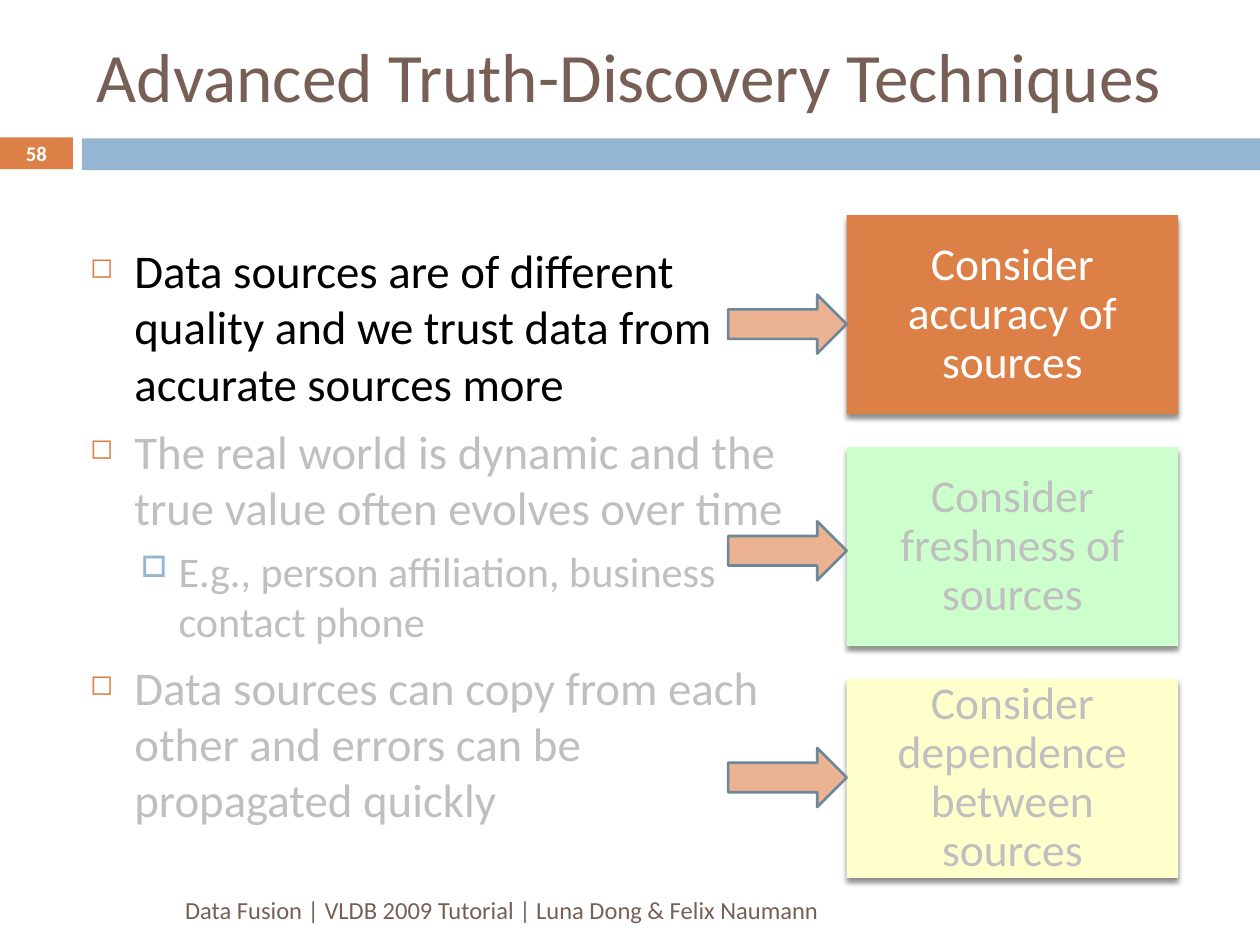
from lxml import etree
from pptx import Presentation
from pptx.dml.color import RGBColor
from pptx.enum.shapes import MSO_SHAPE
from pptx.enum.text import MSO_ANCHOR, PP_ALIGN
from pptx.oxml import parse_xml
from pptx.oxml.ns import qn
from pptx.util import Cm, Pt

RECTANGLE, ARROW = MSO_SHAPE.RECTANGLE, MSO_SHAPE.RIGHT_ARROW
TOP, MIDDLE = MSO_ANCHOR.TOP, MSO_ANCHOR.MIDDLE
LEFT, CENTER, RIGHT = PP_ALIGN.LEFT, PP_ALIGN.CENTER, PP_ALIGN.RIGHT

ORANGE = RGBColor(0xDD, 0x80, 0x47)
BLUE = RGBColor(0x94, 0xB6, 0xD2)
BROWN = RGBColor(0x77, 0x5F, 0x55)
GREEN = RGBColor(0xCC, 0xFF, 0xCC)
YELLOW = RGBColor(0xFF, 0xFF, 0xCC)
PEACH = RGBColor(0xEB, 0xB3, 0x91)
SLATE = RGBColor(0x6D, 0x87, 0x9B)
GREY = RGBColor(0xBF, 0xBF, 0xBF)
BLACK = RGBColor(0, 0, 0)
WHITE = RGBColor(0xFF, 0xFF, 0xFF)

FONT = "Calibri"
DRAWING = "http://schemas.openxmlformats.org/drawingml/2006/main"
SHADOW = (
    f'<a:effectLst xmlns:a="{DRAWING}">'
    '<a:outerShdw blurRad="38100" dist="30480" dir="5400000" rotWithShape="0">'
    '<a:srgbClr val="000000"><a:alpha val="45000"/></a:srgbClr>'
    "</a:outerShdw></a:effectLst>"
)

# level: indent, hanging, space before, size, symbol, symbol colour, symbol percent
LEVELS = [
    (0.89, 0.89, 7, 26.8, "◻", ORANGE, 60),
    (1.78, 0.76, 5.5, 24.1, "□", BLUE, 70),
]
POINTS = [
    (0, "Data sources are of different quality and we trust data from accurate sources more", BLACK),
    (0, "The real world is dynamic and the true value often evolves over time", GREY),
    (1, "E.g., person affiliation, business contact phone", GREY),
    (0, "Data sources can copy from each other and errors can be propagated quickly", GREY),
]
CONSIDERATIONS = [
    ("Consider accuracy of sources", ORANGE, WHITE),
    ("Consider freshness of sources", GREEN, GREY),
    ("Consider dependence between sources", YELLOW, GREY),
]


def add_span(para, text, size, color, bold=False):
    """Append one formatted run to a paragraph."""
    span = para.add_run()
    span.text = text
    span.font.name = FONT
    span.font.size = Pt(size)
    span.font.bold = bold
    span.font.color.rgb = color


def add_block(page, kind, left, top, width, height, fill):
    """Draw a filled shape without outline or shadow."""
    block = page.shapes.add_shape(kind, Cm(left), Cm(top), Cm(width), Cm(height))
    block.shadow.inherit = False
    block.fill.solid()
    block.fill.fore_color.rgb = fill
    block.line.fill.background()
    return block


def prepare_frame(shape, anchor, align, margin=None):
    """Set wrapping, anchor and margins, and return the frame's first paragraph."""
    frame = shape.text_frame
    frame.word_wrap = True
    frame.vertical_anchor = anchor
    if margin is not None:
        frame.margin_left = frame.margin_right = Cm(margin)
        frame.margin_top = frame.margin_bottom = Cm(margin)
    frame.paragraphs[0].alignment = align
    return frame.paragraphs[0]


def add_label(page, left, top, width, height, text, size, align):
    """Place one brown line of text in the given box."""
    box = page.shapes.add_textbox(Cm(left), Cm(top), Cm(width), Cm(height))
    add_span(prepare_frame(box, MIDDLE, align), text, size, BROWN)


def add_band(page, left, top, width, height, number):
    """Draw the page number tab and the bar to its right."""
    tab_width, bar_offset = 1.47, 1.65
    tab = add_block(page, RECTANGLE, left, top, tab_width, height, ORANGE)
    add_span(prepare_frame(tab, MIDDLE, CENTER, 0), number, 11.9, WHITE, True)
    add_block(page, RECTANGLE, left + bar_offset, top + 0.02, width - bar_offset, height, BLUE)


def set_bullet(para, indent, hanging, symbol, color, percent):
    """Give a paragraph a hanging bullet."""
    properties = para._p.get_or_add_pPr()
    properties.set("marL", str(Cm(indent)))
    properties.set("indent", str(-Cm(hanging)))
    bullet_color = etree.SubElement(properties, qn("a:buClr"))
    etree.SubElement(bullet_color, qn("a:srgbClr"), val=str(color))
    etree.SubElement(properties, qn("a:buSzPct"), val=str(percent * 1000))
    etree.SubElement(properties, qn("a:buChar"), char=symbol)


def add_points(page, left, top, width, height, points):
    """Write the bulleted list in the given box."""
    box = page.shapes.add_textbox(Cm(left), Cm(top), Cm(width), Cm(height))
    para = prepare_frame(box, TOP, LEFT)
    for index, (level, text, color) in enumerate(points):
        if index:
            para = box.text_frame.add_paragraph()
        indent, hanging, before, size, symbol, symbol_color, percent = LEVELS[level]
        para.level = level
        para.space_before = Pt(before)
        set_bullet(para, indent, hanging, symbol, symbol_color, percent)
        add_span(para, text, size, color)


def add_considerations(page, left, top, width, height, entries):
    """Stack the shadowed boxes evenly over the given column."""
    box_height = 4.01
    pitch = (height - box_height) / (len(entries) - 1)
    for index, (text, fill, color) in enumerate(entries):
        box = add_block(page, RECTANGLE, left, top + index * pitch, width, box_height, fill)
        properties = box._element.spPr
        properties.replace(properties.find(qn("a:effectLst")), parse_xml(SHADOW))
        para = prepare_frame(box, MIDDLE, CENTER, 0.28)
        para.line_spacing = 0.9
        add_span(para, text, 26, color)


def add_arrows(page, left, top, width, height, count):
    """Spread the arrows evenly over the given column."""
    arrow_height = 1.19
    pitch = (height - arrow_height) / (count - 1)
    for index in range(count):
        arrow = add_block(page, ARROW, left, top + index * pitch, width, arrow_height, PEACH)
        arrow.line.color.rgb = SLATE
        arrow.line.width = Pt(1.5)


def main():
    """Build the deck and save it."""
    deck = Presentation()
    deck.slide_width, deck.slide_height = Cm(25.4), Cm(19.05)
    page = deck.slides.add_slide(deck.slide_layouts[6])
    add_band(page, 0, 2.77, 25.4, 0.64, "58")
    add_label(page, 1.7, 0.64, 22.66, 1.75, "Advanced Truth-Discovery Techniques", 39.6, LEFT)
    add_label(page, 1.7, 17.83, 15.06, 1.02,
              "Data Fusion | VLDB 2009 Tutorial | Luna Dong & Felix Naumann", 14, RIGHT)
    add_points(page, 1.57, 4.75, 14.58, 12.5, POINTS)
    add_considerations(page, 17.07, 4.34, 6.68, 13.36, CONSIDERATIONS)
    add_arrows(page, 14.68, 5.94, 2.39, 10.33, len(CONSIDERATIONS))
    deck.save("out.pptx")


if __name__ == "__main__":
    main()
